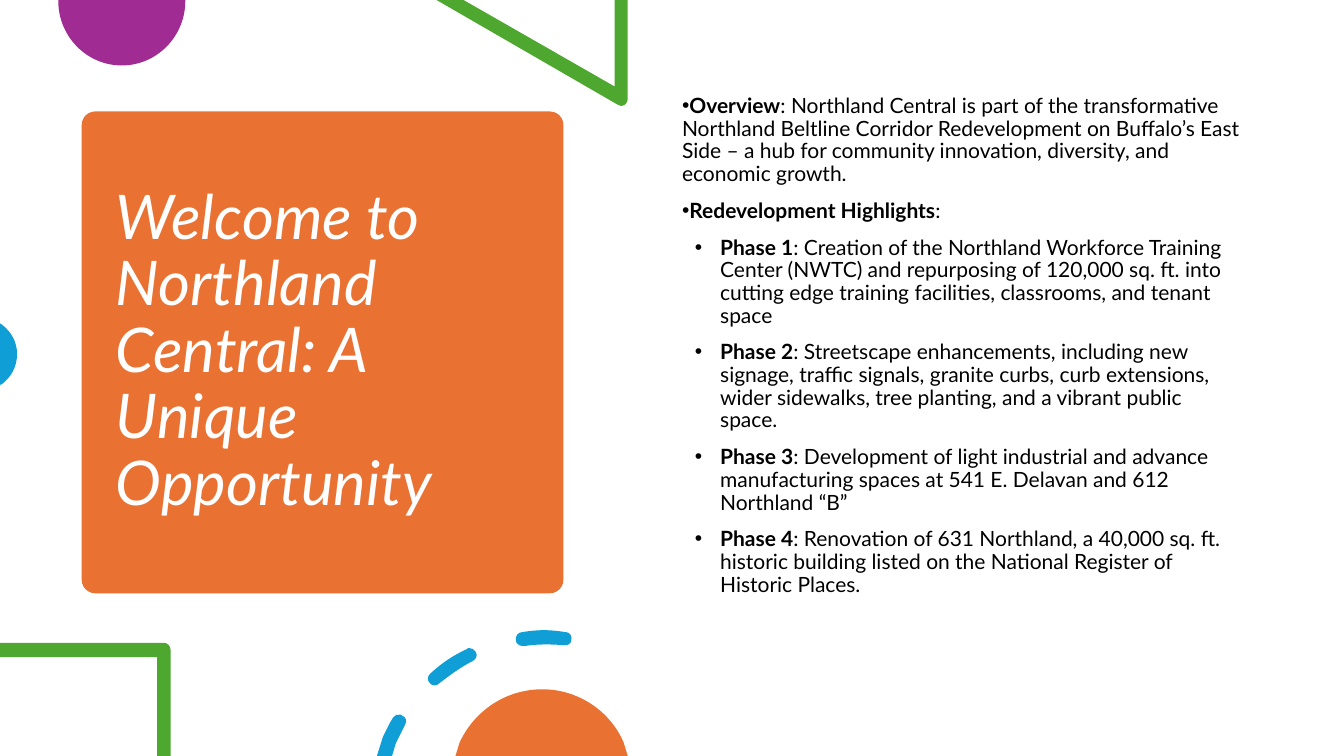
"""Build the Northland Central welcome slide."""
from lxml import etree
from pptx import Presentation
from pptx.dml.color import RGBColor
from pptx.enum.shapes import MSO_SHAPE
from pptx.enum.text import MSO_ANCHOR
from pptx.oxml.ns import qn
from pptx.util import Cm, Pt

ROUNDED = MSO_SHAPE.ROUNDED_RECTANGLE
MIDDLE = MSO_ANCHOR.MIDDLE
ORANGE = RGBColor(0xE9, 0x71, 0x32)
PURPLE = RGBColor(0xA0, 0x2B, 0x93)
GREEN = RGBColor(0x4E, 0xA7, 0x2E)
BLUE = RGBColor(0x0F, 0x9E, 0xD5)
WHITE = RGBColor(0xFF, 0xFF, 0xFF)
BLACK = RGBColor(0, 0, 0)


def draw(page, color, *outlines):
    """Draw outlines in cm: two numbers make a straight line, six make a curve."""
    builder = None
    for start, *segments in outlines:
        corner = [Cm(value) for value in start]
        if builder is None:
            builder = page.shapes.build_freeform(*corner)
        else:
            builder.move_to(*corner)
        builder.add_line_segments(
            [(Cm(x), Cm(y)) for part in segments for x, y in zip(part[::2], part[1::2])])
    shape = builder.convert_to_shape()
    lines = iter(list(shape._element.iter(qn("a:lnTo"))))
    for part in [part for outline in outlines for part in outline[1:]]:
        steps = [next(lines) for _ in part[::2]]
        if len(steps) == 3:
            curve = etree.Element(qn("a:cubicBezTo"))
            steps[0].addprevious(curve)
            for step in steps:
                curve.append(step[0])
                step.getparent().remove(step)
    shape.shadow.inherit = False
    shape.fill.solid()
    shape.fill.fore_color.rgb = color
    shape.line.fill.background()


def write(para, text, size=15, color=BLACK, bold=False, italic=False):
    """Add a formatted span to a paragraph."""
    span = para.add_run()
    span.text = text
    span.font.name = "Lato"
    span.font.size = Pt(size)
    span.font.color.rgb = color
    span.font.bold = bold
    span.font.italic = italic


deck = Presentation()
deck.slide_width = Cm(33.87)
deck.slide_height = Cm(19.05)
page = deck.slides.add_slide(deck.slide_layouts[6])

card = page.shapes.add_shape(ROUNDED, Cm(2.06), Cm(2.81), Cm(12.14), Cm(12.14))
card.adjustments[0] = 0.028
card.shadow.inherit = False
card.fill.solid()
card.fill.fore_color.rgb = ORANGE
card.line.fill.background()

title = page.shapes.add_textbox(Cm(2.67), Cm(3.09), Cm(10.95), Cm(11.58))
title.text_frame.word_wrap = True
title.text_frame.vertical_anchor = MIDDLE
para = title.text_frame.paragraphs[0]
para.line_spacing = 0.9
write(para, "Welcome to Northland Central: A Unique Opportunity", size=44, color=WHITE, italic=True)

purple_disc = [(4.67, 0), (1.47, 0), (1.47, 0.03), (1.47, 0.91, 2.18, 1.65, 3.07, 1.65),
               (3.96, 1.65, 4.67, 0.91, 4.67, 0.03)]
triangle = [(15.82, 0), (15.49, 0), (15.49, 2.18), (11.68, 0), (11, 0), (15.57, 2.64),
            (15.6, 2.66, 15.62, 2.67, 15.65, 2.67), (15.75, 2.67, 15.82, 2.59, 15.82, 2.49)]
blue_disc = [(0, 8.15), (0, 9.7), (0.05, 9.68), (0.28, 9.5, 0.43, 9.25, 0.43, 8.92),
             (0.43, 8.61, 0.28, 8.36, 0.05, 8.18)]
draw(page, PURPLE, purple_disc)
draw(page, GREEN, triangle)
draw(page, BLUE, blue_disc)

highlights = [
    (0, "Overview", ": Northland Central is part of the transformative Northland Beltline Corridor "
     "Redevelopment on Buffalo’s East Side – a hub for community innovation, diversity, "
     "and economic growth."),
    (0, "Redevelopment Highlights", ":"),
    (0.96, "Phase 1", ": Creation of the Northland Workforce Training Center (NWTC) and repurposing "
     "of 120,000 sq. ft. into cutting edge training facilities, classrooms, and tenant space"),
    (0.96, "Phase 2", ": Streetscape enhancements, including new signage, traffic signals, granite "
     "curbs, curb extensions, wider sidewalks, tree planting, and a vibrant public space."),
    (0.96, "Phase 3", ": Development of light industrial and advance manufacturing spaces at "
     "541 E. Delavan and 612 Northland “B”"),
    (0.96, "Phase 4", ": Renovation of 631 Northland, a 40,000 sq. ft. historic building listed on "
     "the National Register of Historic Places."),
]
body = page.shapes.add_textbox(Cm(16.94), Cm(2.28), Cm(14.6), Cm(13.59))
body.text_frame.word_wrap = True
for index, (margin, label, detail) in enumerate(highlights):
    para = body.text_frame.add_paragraph() if index else body.text_frame.paragraphs[0]
    properties = para._p.get_or_add_pPr()
    properties.set("marL", str(Cm(margin)))
    properties.set("indent", str(-Cm(0.64)))
    etree.SubElement(properties, qn("a:buFont")).set("typeface", "Arial")
    etree.SubElement(properties, qn("a:buChar")).set("char", "•")
    para.line_spacing = 0.9
    if index:
        para.space_before = Pt(10)
    write(para, label, bold=True)
    write(para, detail)

square = [(4.14, 16.2), (0, 16.2), (0, 16.56), (3.96, 16.56), (3.96, 19.05), (4.3, 19.05),
          (4.3, 16.38), (4.3, 16.28, 4.22, 16.2, 4.14, 16.2)]
left_dash = [(10.08, 18.01), (10.01, 17.98, 9.96, 18.03, 9.91, 18.08),
             (9.8, 18.24, 9.73, 18.42, 9.65, 18.57), (9.5, 19.05), (9.88, 19.05), (9.98, 18.72),
             (10.06, 18.57, 10.13, 18.42, 10.21, 18.26),
             (10.26, 18.19, 10.24, 18.06, 10.13, 18.03),
             (10.13, 18.01, 10.11, 18.01, 10.08, 18.01)]
middle_dash = [(11.81, 16.33), (11.81, 16.33, 11.79, 16.33, 11.76, 16.36),
               (11.43, 16.51, 11.13, 16.71, 10.85, 16.97),
               (10.77, 17.02, 10.77, 17.15, 10.82, 17.2),
               (10.85, 17.25, 10.9, 17.27, 10.95, 17.27),
               (11, 17.27, 11.05, 17.25, 11.07, 17.22),
               (11.33, 17.02, 11.61, 16.81, 11.91, 16.66),
               (12.01, 16.61, 12.04, 16.51, 11.99, 16.43),
               (11.96, 16.36, 11.89, 16.33, 11.81, 16.33)]
top_dash = [(13.72, 15.88), (13.51, 15.88, 13.34, 15.9, 13.16, 15.93),
            (13.06, 15.93, 12.98, 16.03, 13, 16.13), (13, 16.21, 13.08, 16.28, 13.18, 16.28),
            (13.18, 16.28, 13.18, 16.28, 13.21, 16.28),
            (13.54, 16.23, 13.87, 16.23, 14.22, 16.26),
            (14.3, 16.28, 14.4, 16.21, 14.4, 16.13), (14.43, 16.03, 14.35, 15.93, 14.27, 15.93),
            (14.27, 15.93, 14.25, 15.93, 14.25, 15.93),
            (14.07, 15.9, 13.89, 15.88, 13.72, 15.88)]
dome = [(13.67, 17.37), (12.73, 17.37, 11.94, 17.93, 11.58, 18.72), (11.48, 19.05),
        (15.82, 19.05), (15.72, 18.72), (15.39, 17.93, 14.58, 17.37, 13.67, 17.37)]
draw(page, GREEN, square)
draw(page, BLUE, left_dash, middle_dash, top_dash)
draw(page, ORANGE, dome)

deck.save("out.pptx")
